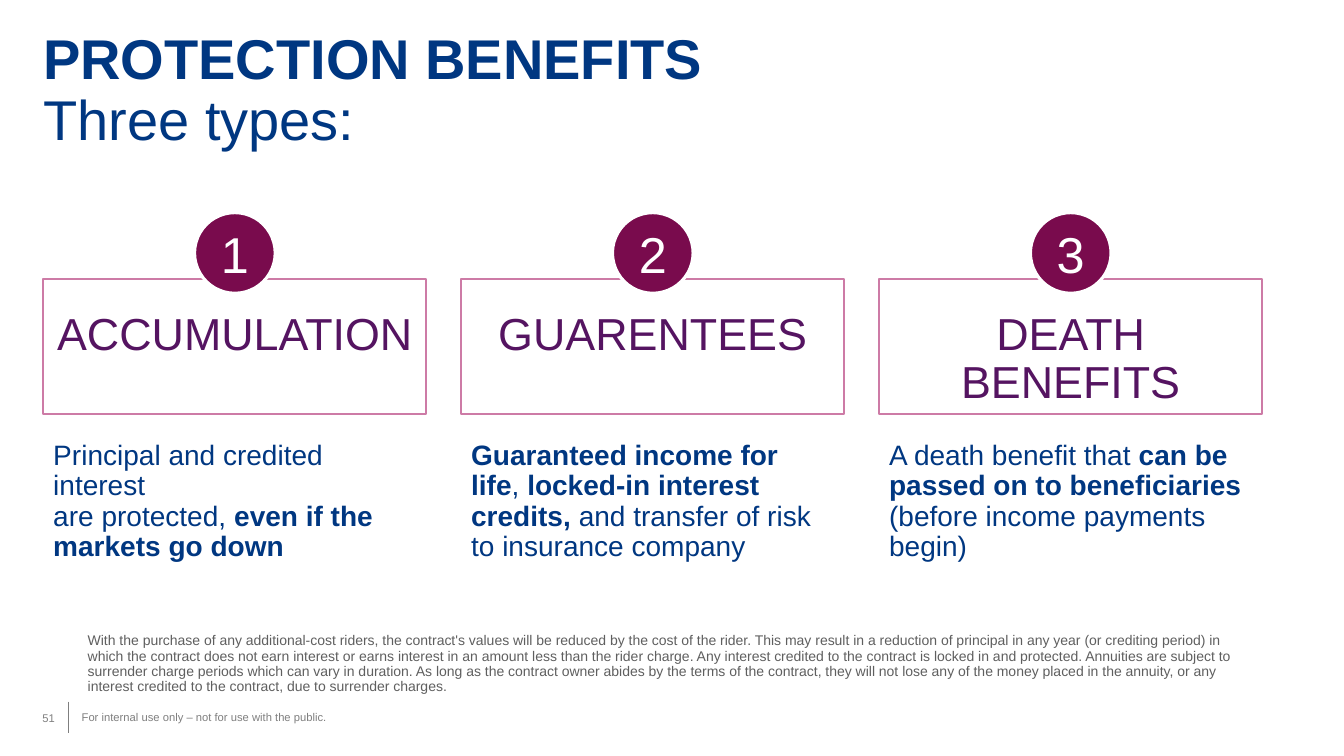
from pptx import Presentation
from pptx.dml.color import RGBColor
from pptx.enum.shapes import MSO_CONNECTOR, MSO_SHAPE
from pptx.enum.text import MSO_ANCHOR, PP_ALIGN
from pptx.oxml.ns import qn
from pptx.util import Inches, Pt
from lxml.etree import SubElement

NAVY = RGBColor(0x00, 0x37, 0x81)
WINE = RGBColor(0x79, 0x0B, 0x4D)
PINK = RGBColor(0xCD, 0x7B, 0xA6)
PLUM = RGBColor(0x55, 0x14, 0x61)
WHITE = RGBColor(0xFF, 0xFF, 0xFF)
GRAY = RGBColor(0x7F, 0x7F, 0x7F)
DARK = RGBColor(0x5F, 0x5F, 0x5F)

PAD = (0.1, 0.05, 0.1, 0.05)
NONE = (0, 0, 0, 0)

# Heading, heading height, and details as (words, bold) runs
TYPES = [
    ("ACCUMULATION", 0.59,
     [("Principal and credited interest \nare protected, ", False),
      ("even if the \nmarkets go down", True)]),
    ("GUARENTEES", 0.59,
     [("Guaranteed income for life", True), (", ", False),
      ("locked-in interest credits, ", True),
      ("and transfer of risk to insurance company", False)]),
    ("DEATH BENEFITS", 1.07,
     [("A death benefit that ", False),
      ("can be passed on to beneficiaries \n", True),
      ("(before income payments begin)", False)]),
]

RIDER = (
    "With the purchase of any additional-cost riders, the contract's values "
    "will be reduced by the cost of the rider. This may result in a reduction "
    "of principal in any year (or crediting period) in which the contract does "
    "not earn interest or earns interest in an amount less than the rider "
    "charge. Any interest credited to the contract is locked in and protected. "
    "Annuities are subject to surrender charge periods which can vary in "
    "duration. As long as the contract owner abides by the terms of the "
    "contract, they will not lose any of the money placed in the annuity, or "
    "any interest credited to the contract, due to surrender charges."
)


class Deck:
    font = "Arial"

    def __init__(self):
        self.file = Presentation()
        self.file.slide_width = Inches(13.33)
        self.file.slide_height = Inches(7.5)
        self.slide = self.file.slides.add_slide(self.file.slide_layouts[6])

    def fill_text(self, shape, runs, size, color, pad=PAD,
                  anchor=MSO_ANCHOR.TOP, align=PP_ALIGN.LEFT, space=0.9):
        frame = shape.text_frame
        frame.word_wrap = True
        frame.vertical_anchor = anchor
        (frame.margin_left, frame.margin_top,
         frame.margin_right, frame.margin_bottom) = map(Inches, pad)
        para = frame.paragraphs[0]
        para.alignment = align
        para.line_spacing = space
        for words, bold in runs:
            for num, part in enumerate(words.split("\n")):
                if num:
                    para.add_line_break()
                if part:
                    run = para.add_run()
                    run.text = part
                    run.font.name = self.font
                    run.font.size = Pt(size)
                    run.font.bold = bold
                    run.font.color.rgb = color

    def text(self, box, runs, size, color, **style):
        shape = self.slide.shapes.add_textbox(*map(Inches, box))
        self.fill_text(shape, runs, size, color, **style)

    def shape(self, kind, box, line, width, fill=None):
        shape = self.slide.shapes.add_shape(kind, *map(Inches, box))
        shape.shadow.inherit = False
        if fill is None:
            shape.fill.background()
        else:
            shape.fill.solid()
            shape.fill.fore_color.rgb = fill
        shape.line.color.rgb = line
        shape.line.width = Pt(width)
        return shape

    def badge(self, box, label):
        disc = self.shape(MSO_SHAPE.OVAL, box, WHITE, 2.25, WINE)
        self.fill_text(disc, [(label, False)], 36, WHITE, space=1.0,
                       anchor=MSO_ANCHOR.MIDDLE, align=PP_ALIGN.CENTER)

    def line(self, ends, color, width):
        line = self.slide.shapes.add_connector(
            MSO_CONNECTOR.STRAIGHT, *map(Inches, ends))
        line.line.color.rgb = color
        line.line.width = Pt(width)
        SubElement(line._element.spPr, qn("a:effectLst"))


def main():
    deck = Deck()

    # Title
    deck.text((0.43, 0.3, 7.43, 1.21),
              [("PROTECTION BENEFITS\n", True), ("Three types:", False)],
              40, NAVY, pad=NONE, anchor=MSO_ANCHOR.BOTTOM)

    # Three columns: frame, number, heading, details
    wide, step, disc = 3.8, 4.145, 0.8
    for col, (head, tall, body) in enumerate(TYPES):
        left = 0.43 + col * step
        deck.shape(MSO_SHAPE.RECTANGLE, (left, 2.77, wide, 1.34), PINK, 1.5)
        deck.badge((left + (wide - disc) / 2, 2.11, disc, disc), str(col + 1))
        deck.text((left, 3.04, wide, tall), [(head, False)], 32, PLUM,
                  align=PP_ALIGN.CENTER)
        deck.text((left, 4.33, wide, 1.31), body, 20, NAVY)

    # Disclosure
    deck.text((0.87, 6.56, 11.58, 0.33), [(RIDER, False)], 10, DARK,
              pad=NONE, anchor=MSO_ANCHOR.BOTTOM)

    # Footer
    deck.text((0.42, 6.92, 0.4, 0.4), [("51", False)], 8, GRAY, space=1.0,
              pad=(0, 0.06, 0, 0.06), anchor=MSO_ANCHOR.MIDDLE)
    deck.line((0.68, 6.96, 0.68, 7.27), GRAY, 0.75)
    deck.text((0.81, 6.99, 11.91, 0.26),
              [("For internal use only – not for use with the public.", False)],
              8, GRAY, space=1.0, pad=(0, 0.06, 0.12, 0.06))

    deck.file.save("out.pptx")


if __name__ == "__main__":
    main()
